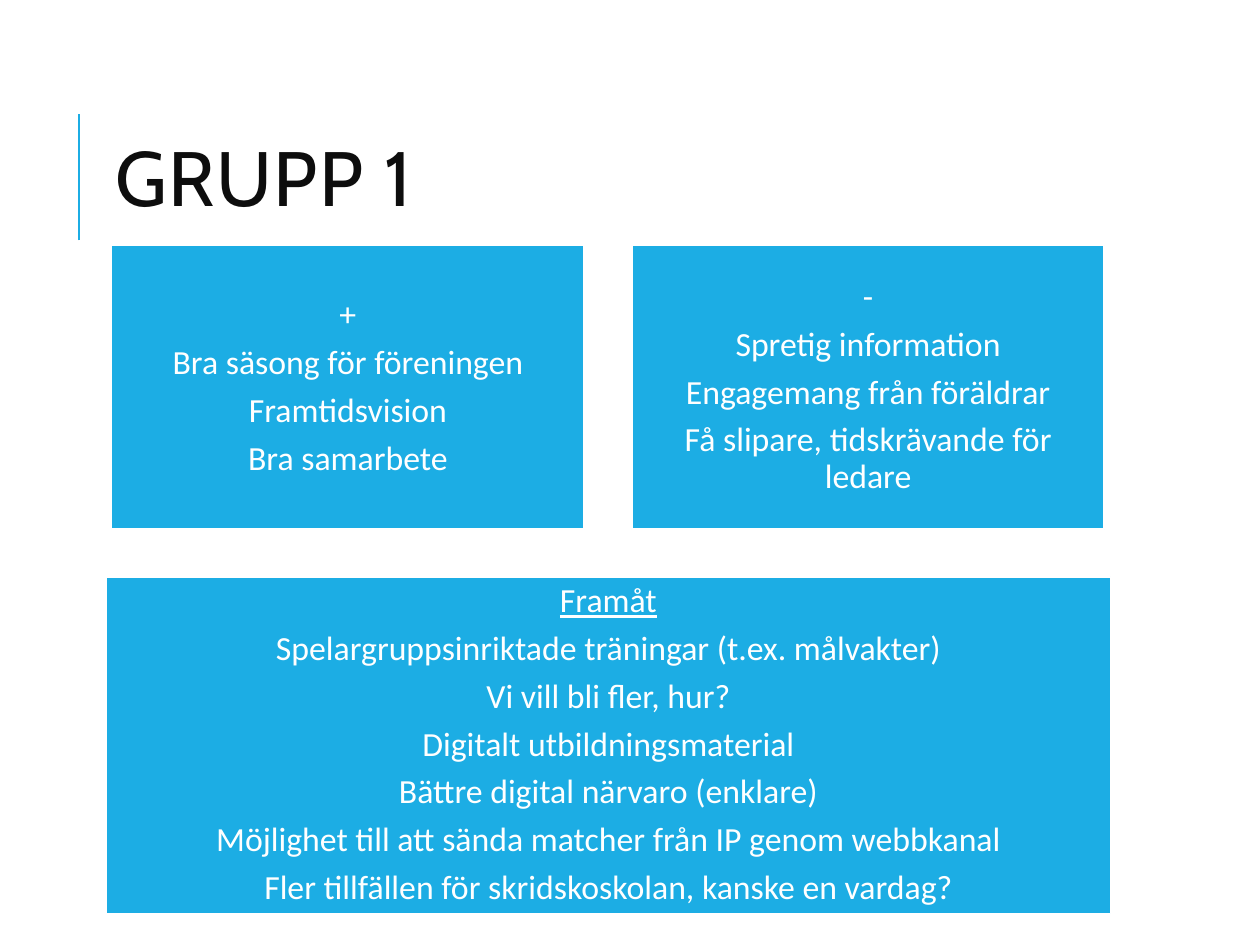
from pptx import Presentation
from pptx.dml.color import RGBColor
from pptx.enum.shapes import MSO_CONNECTOR as CONN, MSO_SHAPE as SHAPE
from pptx.enum.text import MSO_ANCHOR as ANCHOR, MSO_AUTO_SIZE as FIT, PP_ALIGN as ALIGN
from pptx.oxml.ns import qn
from pptx.util import Inches, Pt
from lxml.etree import SubElement

BLUE = RGBColor(0x1C, 0xAD, 0xE4)
WHITE = RGBColor(0xFF, 0xFF, 0xFF)
INK = RGBColor(0x0D, 0x0D, 0x0D)

PLUS = ["+", "Bra säsong för föreningen", "Framtidsvision", "Bra samarbete"]
MINUS = ["-", "Spretig information", "Engagemang från föräldrar",
         "Få slipare, tidskrävande för ledare"]
FORWARD = ["Framåt", "Spelargruppsinriktade träningar (t.ex. målvakter)",
           "Vi vill bli fler, hur?", "Digitalt utbildningsmaterial",
           "Bättre digital närvaro (enklare)",
           "Möjlighet till att sända matcher från IP genom webbkanal",
           "Fler tillfällen för skridskoskolan, kanske en vardag?"]


class GroupSlide:
    """Builds a group feedback slide in one shared style."""

    title_font, body_font = "Cabin", "Calibri"

    def __init__(self, prs):
        self.s = prs.slides.add_slide(prs.slide_layouts[5])

    def font(self, p, name, size, color):
        p.font.name, p.font.size = name, Pt(size)
        p.font.color.rgb = color

    def title(self, text, x, y, w, h):
        sp = self.s.shapes.title
        sp.left, sp.top, sp.width, sp.height = map(Inches, (x, y, w, h))
        tf = sp.text_frame
        tf.text = text
        tf.auto_size = FIT.NONE
        tf.vertical_anchor = ANCHOR.MIDDLE
        p = tf.paragraphs[0]
        p.alignment, p.line_spacing = ALIGN.LEFT, 0.8
        self.font(p, self.title_font, 61.6, INK)
        p.runs[0].font._element.set("spc", "140")

    def rule(self, x, top, bottom):
        line = self.s.shapes.add_connector(
            CONN.STRAIGHT, Inches(x), Inches(bottom), Inches(x), Inches(top))
        line.line.color.rgb, line.line.width = BLUE, Pt(1.5)
        SubElement(line._element.spPr, qn("a:effectLst"))

    def panel(self, lines, x, y, w, h, underline_first=False):
        sp = self.s.shapes.add_shape(SHAPE.RECTANGLE, *map(Inches, (x, y, w, h)))
        sp.shadow.inherit = False
        sp.fill.solid()
        sp.fill.fore_color.rgb = BLUE
        sp.line.color.rgb, sp.line.width = WHITE, Pt(1.25)
        tf = sp.text_frame
        tf.word_wrap = True
        tf.vertical_anchor = ANCHOR.MIDDLE
        tf.margin_left = tf.margin_right = tf.margin_top = tf.margin_bottom = Inches(0.11)
        tf.text = "\n".join(lines)
        for p in tf.paragraphs:
            p.alignment, p.line_spacing, p.space_after = ALIGN.CENTER, 0.9, Pt(9)
            self.font(p, self.body_font, 27, WHITE)
        if underline_first:
            tf.paragraphs[0].font.underline = True


def main():
    prs = Presentation()
    prs.slide_width, prs.slide_height = Inches(14), Inches(10.5)
    slide = GroupSlide(prs)
    slide.rule(0.88, 1.27, 2.67)
    slide.title("GRUPP 1", 1.18, 0.9, 11.16, 2.3)
    for i, lines in enumerate((PLUS, MINUS)):
        slide.panel(lines, 1.24 + i * 5.78, 2.73, 5.25, 3.15)
    slide.panel(FORWARD, 1.18, 6.41, 11.16, 3.74, underline_first=True)
    prs.save("out.pptx")


if __name__ == "__main__":
    main()
